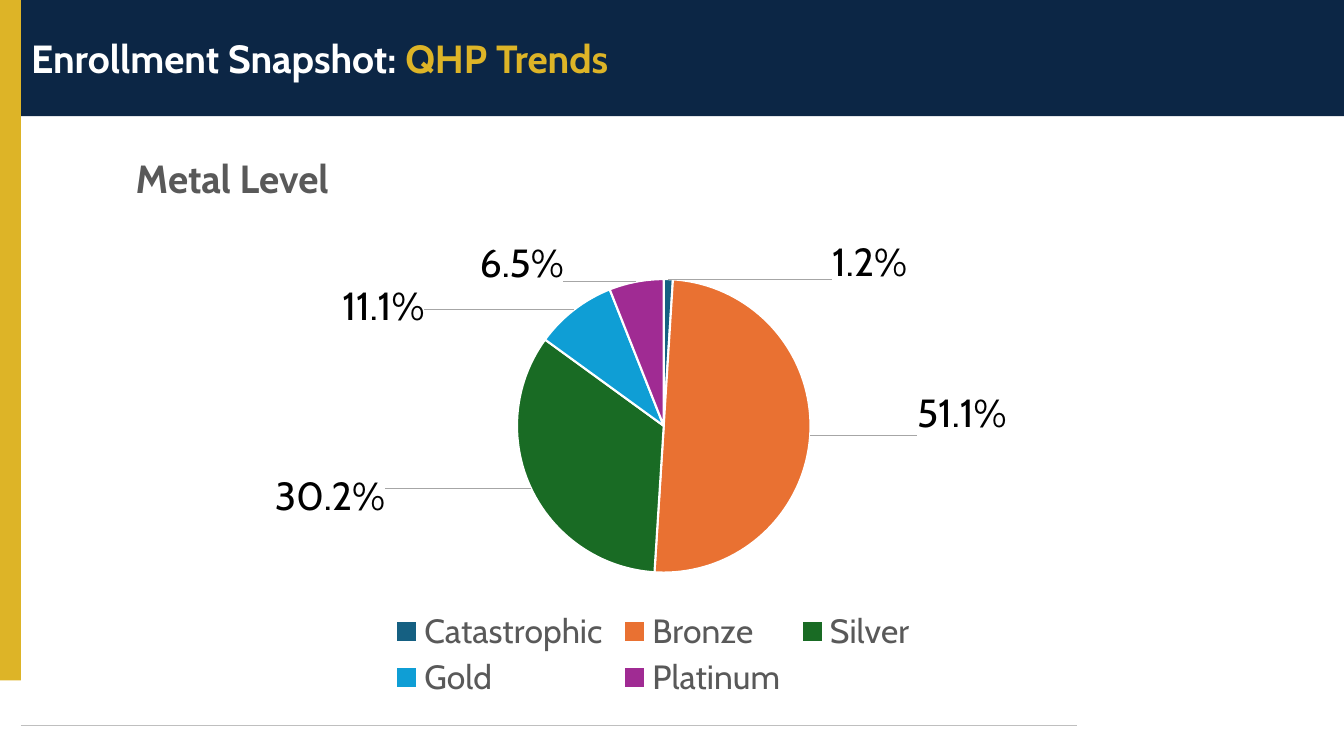
from lxml import etree
from pptx import Presentation
from pptx import util as u
from pptx.chart.data import CategoryChartData
from pptx.dml.color import RGBColor
from pptx.enum import chart as ch, shapes, text
from pptx.oxml import ns

NAVY = RGBColor(0x0C, 0x26, 0x45)
GOLD = RGBColor(0xDD, 0xB4, 0x27)
WHITE = RGBColor(0xFF, 0xFF, 0xFF)
BLACK = RGBColor(0, 0, 0)
GREY = RGBColor(0x59, 0x59, 0x59)
RULE = RGBColor(0xBF, 0xBF, 0xBF)
LEADER = RGBColor(0xA6, 0xA6, 0xA6)

METALS = [
    ("Catastrophic", 0.01, "1.2%", RGBColor(0x15, 0x60, 0x82), (0.19, -0.16)),
    ("Bronze", 0.50, "51.1%", RGBColor(0xE9, 0x71, 0x32), (0.21, -0.03)),
    ("Silver", 0.34, "30.2%", RGBColor(0x19, 0x6B, 0x24), (-0.25, 0.07)),
    ("Gold", 0.09, "11.1%", RGBColor(0x0F, 0x9E, 0xD5), (-0.22, -0.11)),
    ("Platinum", 0.06, "6.5%", RGBColor(0xA0, 0x2B, 0x93), (-0.12, -0.16)),
]


class SnapshotSlide:
    """Draws the parts of one enrollment slide in a shared style."""

    FONT = "Cabin"

    def __init__(self, deck):
        self.slide = deck.slides.add_slide(deck.slide_layouts[5])

    def style(self, font, size, color, bold=False):
        font.name, font.size, font.bold = self.FONT, u.Pt(size), bold
        font.color.rgb = color

    def band(self, left, top, width, height, color):
        band = self.slide.shapes.add_shape(
            shapes.MSO_SHAPE.RECTANGLE, *map(u.Pt, (left, top, width, height)))
        band.shadow.inherit = False
        band.fill.solid()
        band.fill.fore_color.rgb = color
        band.line.fill.background()

    def rule(self, left, right, y):
        rule = self.slide.shapes.add_connector(
            shapes.MSO_CONNECTOR.STRAIGHT, *map(u.Pt, (left, y, right, y)))
        rule.line.color.rgb = RULE
        rule.line.width = u.Pt(1)
        etree.SubElement(rule._element.spPr, ns.qn("a:effectLst"))

    def title(self, left, top, width, height, parts):
        title = self.slide.shapes.title
        title.left, title.top, title.width, title.height = map(
            u.Pt, (left, top, width, height))
        self.slide.shapes._spTree.append(title._element)
        frame = title.text_frame
        frame.word_wrap = True
        frame.vertical_anchor = text.MSO_ANCHOR.MIDDLE
        heading = frame.paragraphs[0]
        heading.alignment = text.PP_ALIGN.LEFT
        for words, color in parts:
            run = heading.add_run()
            run.text = words
            self.style(run.font, 28, color, True)

    def layout(self, **settings):
        layout = etree.Element(ns.qn("c:layout"))
        manual = etree.SubElement(layout, ns.qn("c:manualLayout"))
        for key, value in settings.items():
            etree.SubElement(manual, ns.qn(f"c:{key}")).set("val", str(value))
        return layout

    def pie(self, left, top, width, height, heading, metals):
        data = CategoryChartData(number_format="0%")
        data.categories = [metal[0] for metal in metals]
        data.add_series("Series 1", [metal[1] for metal in metals])
        chart = self.slide.shapes.add_chart(
            ch.XL_CHART_TYPE.PIE, *map(u.Pt, (left, top, width, height)), data).chart
        self.style(chart.font, 10, BLACK)
        chart.has_title = True
        chart.chart_title.text_frame.text = heading
        self.style(chart.chart_title.text_frame.paragraphs[0].runs[0].font, 28, GREY, True)
        chart.has_legend = True
        legend = chart.legend
        legend.position = ch.XL_LEGEND_POSITION.BOTTOM
        legend.include_in_layout = False
        self.style(legend.font, 24, GREY)
        self.place(chart)
        plot = chart.plots[0]
        plot.vary_by_categories = True
        self.slices(plot.series[0], metals)

    def place(self, chart):
        edge = dict(xMode="edge", yMode="edge")
        spots = {
            "c:title": self.layout(**edge, x=0.01, y=0.01),
            "c:plotArea": self.layout(layoutTarget="inner", **edge,
                                      x=0.37, y=0.25, w=0.28, h=0.52),
            "c:legend": self.layout(**edge, x=0.25, y=0.83, w=0.5, h=0.17),
        }
        for tag, spot in spots.items():
            part = chart._chartSpace.chart.find(ns.qn(tag))
            for old in part.findall(ns.qn("c:layout")):
                part.remove(old)
            before = {"c:title": "c:tx", "c:legend": "c:legendPos"}.get(tag)
            if before:
                part.find(ns.qn(before)).addnext(spot)
            else:
                part.insert(0, spot)

    def slices(self, series, metals):
        labels = series.data_labels
        labels.show_value = True
        labels.number_format, labels.number_format_is_linked = "0%", False
        labels.position = ch.XL_LABEL_POSITION.CENTER
        self.style(labels.font, 28, BLACK, True)
        for index, (_, _, share, color, (dx, dy)) in enumerate(metals):
            point = series.points[index]
            point.format.fill.solid()
            point.format.fill.fore_color.rgb = color
            point.format.line.color.rgb = WHITE
            point.format.line.width = u.Pt(1.5)
            label = point.data_label
            label.text_frame.text = share
            self.style(label.text_frame.paragraphs[0].runs[0].font, 28, BLACK)
            label.position = ch.XL_LABEL_POSITION.CENTER
            labels._element.findall(ns.qn("c:dLbl"))[index].find(
                ns.qn("c:idx")).addnext(self.layout(x=dx, y=dy))
        self.leaders(labels._element)

    def leaders(self, labels):
        show = labels.find(ns.qn("c:showLeaderLines"))
        if show is None:
            show = etree.SubElement(labels, ns.qn("c:showLeaderLines"))
        show.set("val", "1")
        lines = etree.Element(ns.qn("c:leaderLines"))
        show.addnext(lines)
        stroke = etree.SubElement(etree.SubElement(lines, ns.qn("c:spPr")), ns.qn("a:ln"))
        stroke.set("w", str(u.Pt(0.75)))
        fill = etree.SubElement(stroke, ns.qn("a:solidFill"))
        etree.SubElement(fill, ns.qn("a:srgbClr")).set("val", str(LEADER))


def main():
    deck = Presentation()
    deck.slide_width, deck.slide_height = u.Pt(960), u.Pt(540)
    snapshot = SnapshotSlide(deck)
    snapshot.band(15, 0, 945, 83, NAVY)
    snapshot.title(15, 8, 930, 67, [("Enrollment Snapshot: ", WHITE), ("QHP Trends", GOLD)])
    snapshot.rule(15, 769, 518.4)
    snapshot.band(0, 0, 15, 486, GOLD)
    snapshot.pie(84.2, 98.6, 764.6, 403.2, "Metal Level", METALS)
    deck.save("out.pptx")


if __name__ == "__main__":
    main()
